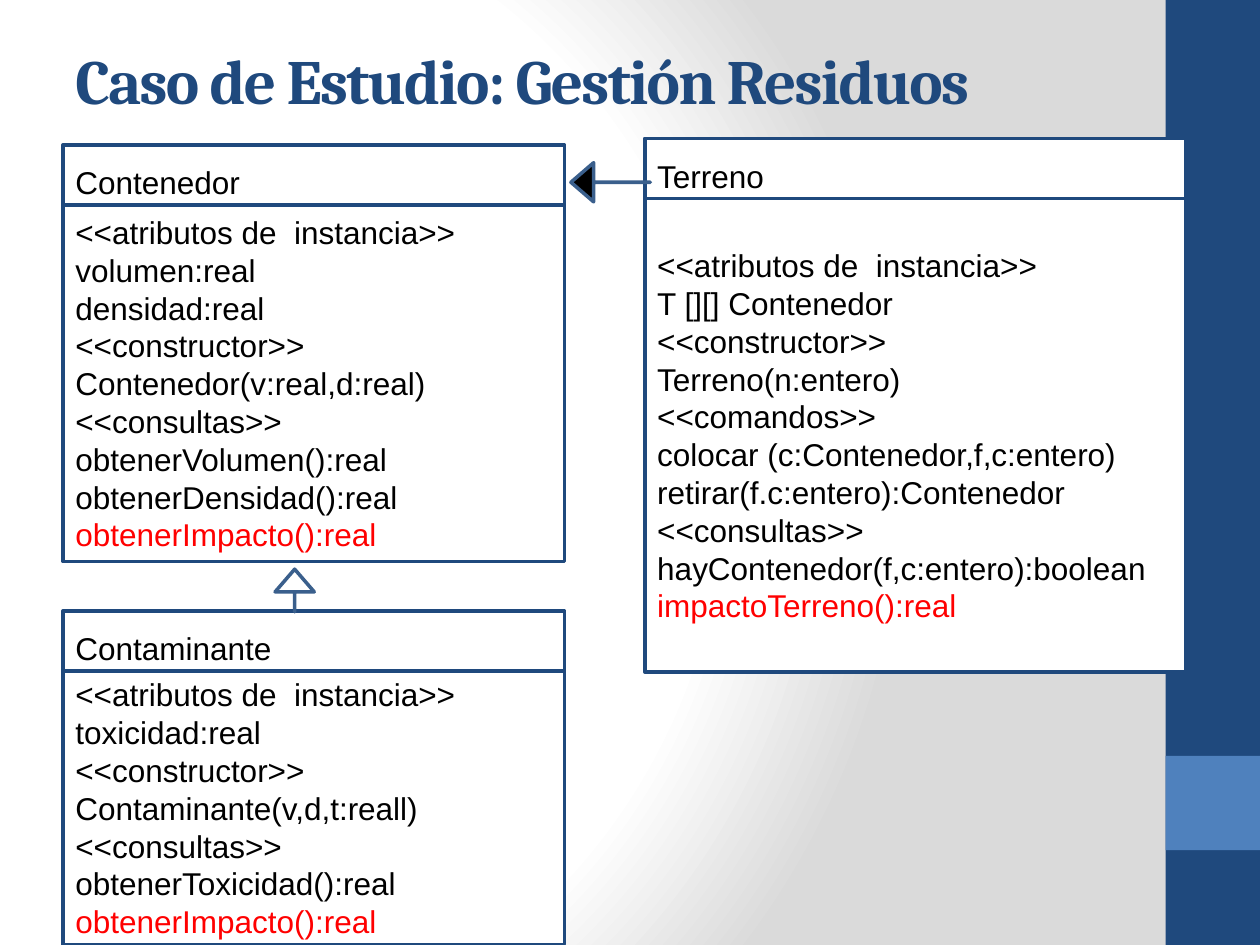
from dataclasses import dataclass

import lxml.etree
import pptx
import pptx.dml.color
import pptx.enum.shapes
import pptx.enum.text
import pptx.oxml.ns
import pptx.util

Cm = pptx.util.Cm
Shapes = pptx.enum.shapes.MSO_SHAPE
qn = pptx.oxml.ns.qn

COLORS = {
    "navy": "1F497D",
    "blue": "4F81BD",
    "arrow_edge": "3A5F8C",
    "white": "FFFFFF",
    "grey": "DADADA",
    "black": "000000",
    "red": "FF0000",
}
SLIDE_WIDTH, SLIDE_HEIGHT = 25.4, 19.05
SIDEBAR_LEFT, SIDEBAR_WIDTH = 23.5, 1.9
HEADER_HEIGHT, BODY_OFFSET = 1.5, 1.21
ATTRIBUTES = "<<atributos de  instancia>>"
CONSTRUCTOR = "<<constructor>>"
QUERIES = "<<consultas>>"


@dataclass
class Frame:
    left: float
    top: float
    width: float
    height: float

    def lengths(self) -> list:
        return [Cm(self.left), Cm(self.top), Cm(self.width), Cm(self.height)]


@dataclass
class UmlClass:
    name: str
    left: float
    top: float
    width: float
    body_height: float
    members: list[str]
    highlighted: str


@dataclass
class UmlArrow:
    frame: Frame
    fill: str
    rotation: float = 0


CLASSES = [
    UmlClass("Contenedor", 1.27, 2.92, 10.11, 7.19, [
        ATTRIBUTES, "volumen:real", "densidad:real",
        CONSTRUCTOR, "Contenedor(v:real,d:real)",
        QUERIES, "obtenerVolumen():real", "obtenerDensidad():real",
    ], "obtenerImpacto():real"),
    UmlClass("Contaminante", 1.27, 12.32, 10.11, 5.51, [
        ATTRIBUTES, "toxicidad:real",
        CONSTRUCTOR, "Contaminante(v,d,t:reall)",
        QUERIES, "obtenerToxicidad():real",
    ], "obtenerImpacto():real"),
    UmlClass("Terreno", 13, 2.79, 10.9, 9.55, [
        ATTRIBUTES, "T [][] Contenedor",
        CONSTRUCTOR, "Terreno(n:entero)",
        "<<comandos>>", "colocar (c:Contenedor,f,c:entero)",
        "retirar(f.c:entero):Contenedor",
        QUERIES, "hayContenedor(f,c:entero):boolean",
    ], "impactoTerreno():real"),
]
ARROWS = [
    UmlArrow(Frame(5.51, 11.51, 0.86, 0.79), "white", 90),
    UmlArrow(Frame(11.51, 3.28, 1.6, 0.79), "black"),
]


def rgb(color: str) -> pptx.dml.color.RGBColor:
    return pptx.dml.color.RGBColor.from_string(COLORS[color])


def write_text(para, text: str, *, size: float = 18, font: str = "Arial",
               color: str = "black", bold: bool = False, spacing: float = 0) -> None:
    para.alignment = pptx.enum.text.PP_ALIGN.LEFT
    span = para.add_run()
    span.text = text
    span.font.size = pptx.util.Pt(size)
    span.font.name = font
    span.font.bold = bold
    span.font.color.rgb = rgb(color)
    if spacing:
        span._r.get_or_add_rPr().set("spc", str(round(spacing * 100)))


def prepare_frame(box):
    frame = box.text_frame
    frame.word_wrap = True
    frame.vertical_anchor = pptx.enum.text.MSO_ANCHOR.MIDDLE
    return frame


def draw_shape(page, kind, frame: Frame, fill: str, line: str | None = None):
    box = page.shapes.add_shape(kind, *frame.lengths())
    box.shadow.inherit = False
    box.fill.solid()
    box.fill.fore_color.rgb = rgb(fill)
    if line:
        box.line.color.rgb = rgb(line)
        box.line.width = pptx.util.Pt(2)
    else:
        box.line.fill.background()
    return box


def draw_compartment(page, frame: Frame, lines: list[tuple[str, str]]) -> None:
    box = draw_shape(page, Shapes.RECTANGLE, frame, "white", "navy")
    text_frame = prepare_frame(box)
    for index, (text, color) in enumerate(lines):
        para = text_frame.add_paragraph() if index else text_frame.paragraphs[0]
        write_text(para, text, color=color)


def draw_class(page, uml: UmlClass) -> None:
    header = Frame(uml.left, uml.top, uml.width, HEADER_HEIGHT)
    body = Frame(uml.left, uml.top + BODY_OFFSET, uml.width, uml.body_height)
    draw_compartment(page, header, [(uml.name, "black")])
    members = [(member, "black") for member in uml.members]
    draw_compartment(page, body, members + [(uml.highlighted, "red")])


def draw_arrow(page, arrow: UmlArrow) -> None:
    box = draw_shape(page, Shapes.LEFT_ARROW, arrow.frame, arrow.fill, "arrow_edge")
    box.adjustments[0] = 0
    box.adjustments[1] = 0.58
    box.rotation = arrow.rotation


def paint_background(page) -> None:
    page.background.fill.gradient()
    gradient = next(page.element.iter(qn("a:gradFill")))
    for child in list(gradient):
        gradient.remove(child)
    stops = lxml.etree.SubElement(gradient, qn("a:gsLst"))
    for percent, color in [(0, "white"), (75, "white"), (100, "grey")]:
        stop = lxml.etree.SubElement(stops, qn("a:gs"), pos=str(percent * 1000))
        lxml.etree.SubElement(stop, qn("a:srgbClr"), val=COLORS[color])
    circle = lxml.etree.SubElement(gradient, qn("a:path"), {"path": "circle"})
    lxml.etree.SubElement(circle, qn("a:fillToRect"),
                          l="20000", t="50000", r="100000", b="50000")


def main() -> None:
    deck = pptx.Presentation()
    deck.slide_width, deck.slide_height = Cm(SLIDE_WIDTH), Cm(SLIDE_HEIGHT)
    page = deck.slides.add_slide(deck.slide_layouts[6])
    paint_background(page)
    for top, height, color in [(0, SLIDE_HEIGHT, "navy"), (15.24, 1.9, "blue")]:
        draw_shape(page, Shapes.RECTANGLE,
                   Frame(SIDEBAR_LEFT, top, SIDEBAR_WIDTH, height), color)
    title = page.shapes.add_textbox(*Frame(1.27, 0, 21.16, 3.18).lengths())
    write_text(prepare_frame(title).paragraphs[0], "Caso de Estudio: Gestión Residuos",
               size=36, font="Cambria", color="navy", bold=True, spacing=-1)
    for uml in CLASSES:
        draw_class(page, uml)
    for arrow in ARROWS:
        draw_arrow(page, arrow)
    deck.save("out.pptx")


if __name__ == "__main__":
    main()
